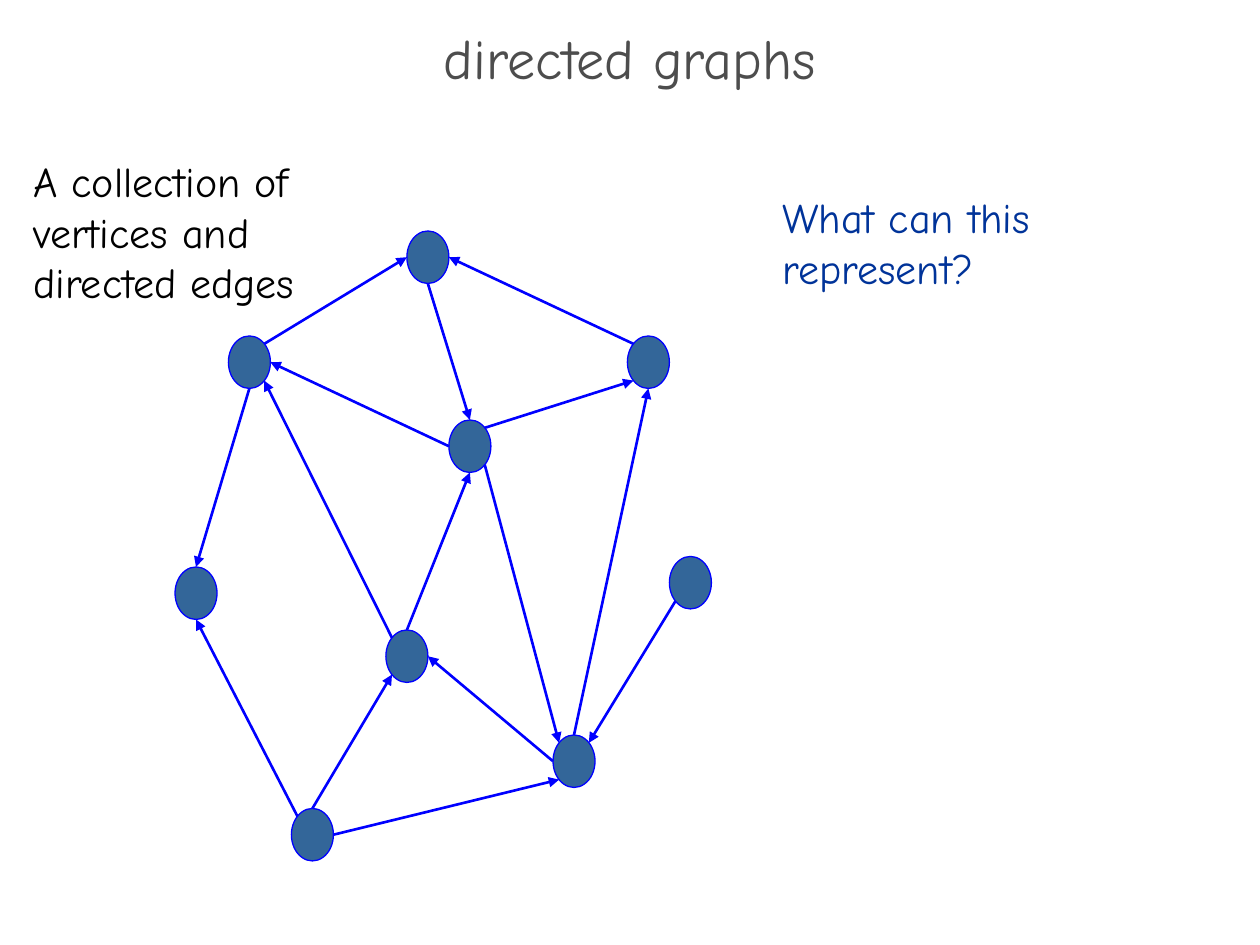
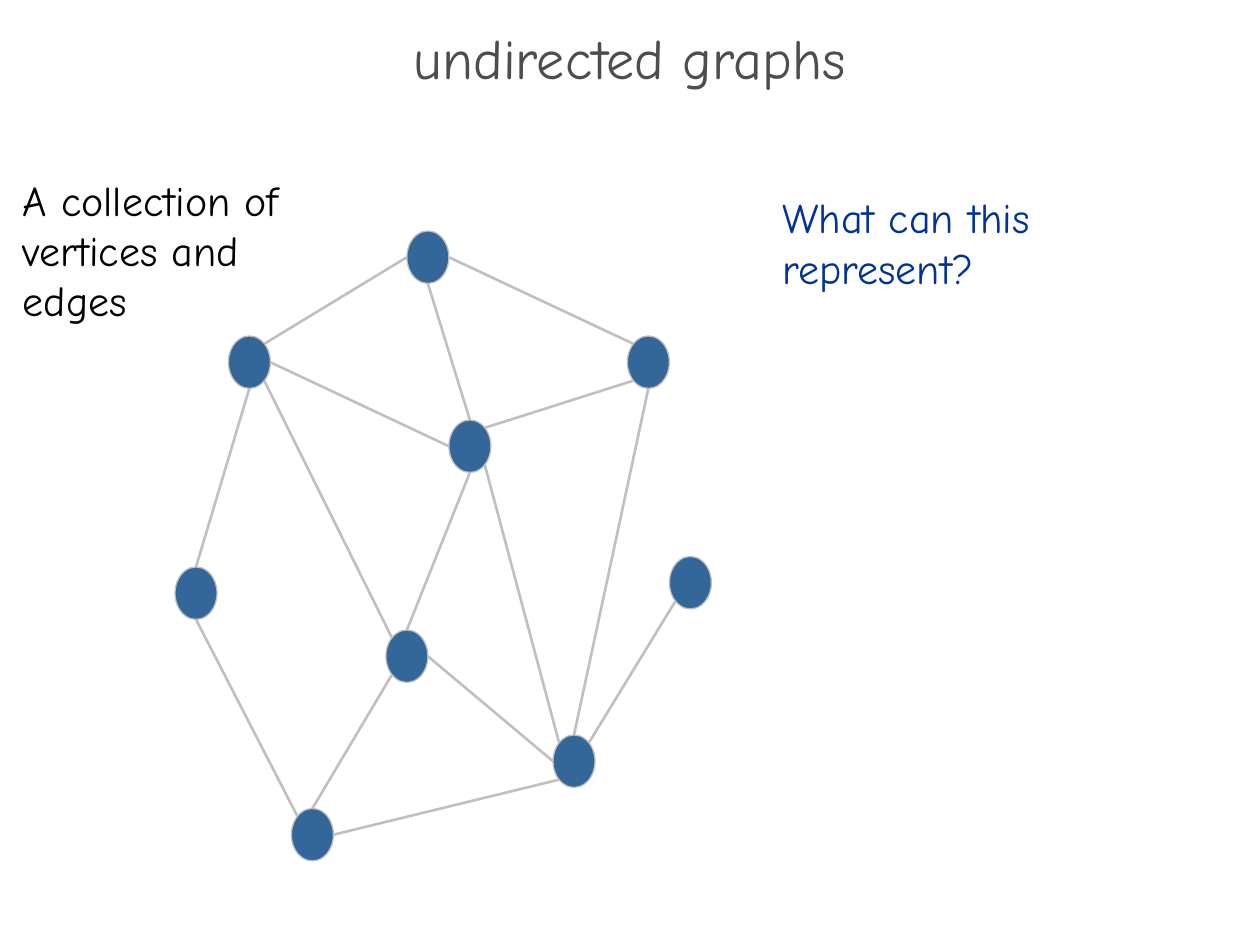
import pptx
import pptx.util
import pptx.dml.color
import pptx.enum.shapes
import pptx.enum.text
import pptx.oxml.ns
from lxml import etree

RGBColor = pptx.dml.color.RGBColor
BLACK = RGBColor(0x00, 0x00, 0x00)
TITLE_GRAY = RGBColor(0x4D, 0x4D, 0x4D)
NAVY = RGBColor(0x00, 0x33, 0x99)
STEEL = RGBColor(0x33, 0x66, 0x99)
BLUE = RGBColor(0x00, 0x00, 0xFF)
SILVER = RGBColor(0xC0, 0xC0, 0xC0)

PX = 914400 / 144
NODE_W, NODE_H = 48, 60
SITES = {
    "N": (24, 0), "NE": (41, 9), "E": (48, 30), "SE": (41, 51),
    "S": (24, 60), "SW": (7, 51), "W": (0, 30), "NW": (7, 9),
}
NODES = {
    "top": (465, 264),
    "left": (261, 384),
    "outer": (765, 636),
    "hub": (513, 480),
    "lower": (441, 720),
    "west": (200, 648),
    "right": (717, 384),
    "bottom": (333, 924),
    "sink": (632, 840),
}
EDGES = [
    ("left", "NE", "top", "W"),
    ("left", "S", "west", "N"),
    ("bottom", "NW", "west", "S"),
    ("bottom", "E", "sink", "SW"),
    ("right", "NW", "top", "E"),
    ("top", "S", "hub", "N"),
    ("hub", "W", "left", "E"),
    ("lower", "NW", "left", "SE"),
    ("lower", "N", "hub", "S"),
    ("bottom", "N", "lower", "SW"),
    ("hub", "NE", "right", "SW"),
    ("outer", "SW", "sink", "NE"),
    ("sink", "W", "lower", "E"),
    ("sink", "N", "right", "S"),
    ("hub", "SE", "sink", "NW"),
]


def px(n):
    return pptx.util.Emu(round(n * PX))


class Deck:
    font = "Comic Neue"
    title_size = 32
    text_size = 24

    def __init__(self):
        self.prs = pptx.Presentation()
        self.prs.slide_width = px(1440)
        self.prs.slide_height = px(1080)
        self.s = None

    def run(self, p, text, size, color):
        r = p.add_run()
        r.text = text
        r.font.name = self.font
        r.font.size = pptx.util.Pt(size)
        r.font.color.rgb = color

    def slide(self, title):
        self.s = self.prs.slides.add_slide(self.prs.slide_layouts[5])
        sp = self.s.shapes.title
        sp.left, sp.top, sp.width, sp.height = px(0), px(39), px(1440), px(72)
        tf = sp.text_frame
        tf.auto_size = pptx.enum.text.MSO_AUTO_SIZE.NONE
        tf.vertical_anchor = pptx.enum.text.MSO_ANCHOR.MIDDLE
        p = tf.paragraphs[0]
        p.alignment = pptx.enum.text.PP_ALIGN.CENTER
        p.line_spacing = 0.7
        self.run(p, title, self.title_size, TITLE_GRAY)

    def text(self, x, y, w, h, lines, color, grow=False, after=0):
        sp = self.s.shapes.add_textbox(px(x), px(y), px(w), px(h))
        tf = sp.text_frame
        tf.word_wrap = True
        if grow:
            tf.auto_size = pptx.enum.text.MSO_AUTO_SIZE.SHAPE_TO_FIT_TEXT
        for i, line in enumerate(lines):
            p = tf.add_paragraph() if i else tf.paragraphs[0]
            p.space_after = pptx.util.Pt(after)
            self.run(p, line, self.text_size, color)

    def node(self, x, y, line):
        sp = self.s.shapes.add_shape(
            pptx.enum.shapes.MSO_SHAPE.OVAL, px(x), px(y), px(NODE_W), px(NODE_H))
        sp.shadow.inherit = False
        sp.fill.solid()
        sp.fill.fore_color.rgb = STEEL
        sp.line.color.rgb = line
        sp.line.width = pptx.util.Pt(0.75)

    def edge(self, start, end, color, arrow):
        c = self.s.shapes.add_connector(
            pptx.enum.shapes.MSO_CONNECTOR.STRAIGHT, *map(px, start + end))
        c.line.color.rgb = color
        c.line.width = pptx.util.Pt(1.5)
        qn = pptx.oxml.ns.qn
        if arrow:
            etree.SubElement(c.line._get_or_add_ln(), qn("a:tailEnd"), type="triangle")
        etree.SubElement(c._element.spPr, qn("a:effectLst"))

    def graph(self, color, arrow):
        for x, y in NODES.values():
            self.node(x, y, color)
        for a, a_site, b, b_site in EDGES:
            start, end = (
                (NODES[n][0] + SITES[site][0], NODES[n][1] + SITES[site][1])
                for n, site in ((a, a_site), (b, b_site)))
            self.edge(start, end, color, arrow)

    def question(self):
        self.text(880, 212, 488, 742, ["What can this represent?"], NAVY, after=6)

    def definition(self, x, y, ending):
        self.text(x, y, 403, 189, ["A collection of", ending], BLACK, grow=True)


def main():
    d = Deck()

    d.slide("directed graphs")
    d.graph(BLUE, arrow=True)
    d.definition(24, 171, "vertices and directed edges")
    d.question()

    d.slide("undirected graphs")
    d.question()
    d.graph(SILVER, arrow=False)
    d.definition(12, 192, "vertices and edges")

    d.prs.save("out.pptx")


if __name__ == "__main__":
    main()
